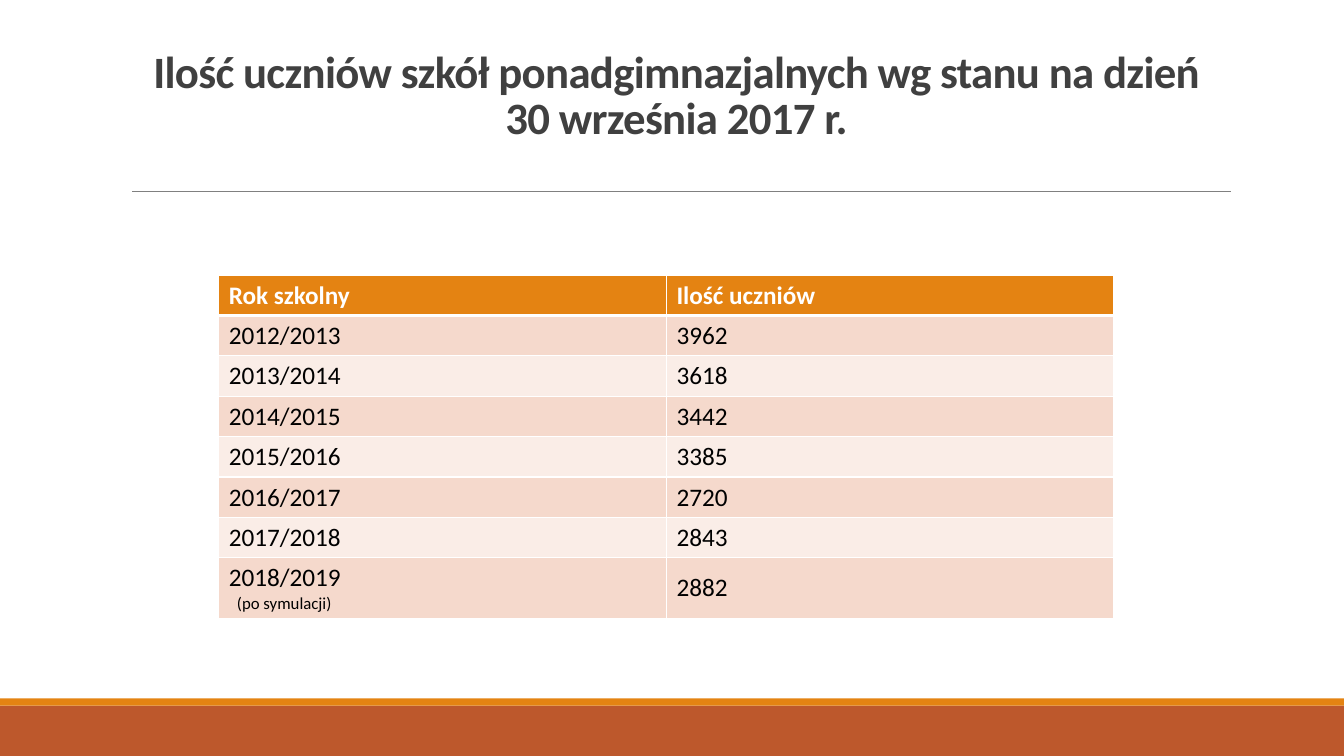
from lxml import etree
from pptx import Presentation
from pptx.dml.color import RGBColor
from pptx.enum.shapes import MSO_CONNECTOR, MSO_SHAPE
from pptx.enum.text import MSO_ANCHOR, PP_ALIGN
from pptx.oxml.ns import qn
from pptx.util import Inches, Pt

# Content
TITLE = ["Ilość uczniów szkół ponadgimnazjalnych wg stanu na dzień", "30 września 2017 r."]
ROWS = [
    ("Rok szkolny", "Ilość uczniów"),
    ("2012/2013", "3962"),
    ("2013/2014", "3618"),
    ("2014/2015", "3442"),
    ("2015/2016", "3385"),
    ("2016/2017", "2720"),
    ("2017/2018", "2843"),
    ("2018/2019", "2882"),
]
NOTE = "(po symulacji)"

# Style
FONT = "Calibri"
WHITE = RGBColor(0xFF, 0xFF, 0xFF)
BLACK = RGBColor(0, 0, 0)
DARK = RGBColor(0x40, 0x40, 0x40)
GREY = RGBColor(0x80, 0x80, 0x80)
ORANGE = RGBColor(0xE4, 0x83, 0x12)
RUST = RGBColor(0xBD, 0x58, 0x2C)
BANDS = [RGBColor(0xFA, 0xED, 0xE7), RGBColor(0xF5, 0xD9, 0xCC)]
RECTANGLE = MSO_SHAPE.RECTANGLE
STRAIGHT = MSO_CONNECTOR.STRAIGHT
MIDDLE, BOTTOM = MSO_ANCHOR.MIDDLE, MSO_ANCHOR.BOTTOM
CENTER = PP_ALIGN.CENTER

# Layout in inches
WIDTH, HEIGHT = 13.33, 7.5
FOOTER_TOP, STRIPE = 7, 0.07
RULE_LEFT, RULE_RIGHT, RULE_Y = 1.31, 12.21, 1.9
TABLE_LEFT, TABLE_TOP, COLUMN = 2.17, 2.73, 4.44
ROW, LAST_ROW = 0.4, 0.6


def add_span(para, text, size, color, bold=False):
    span = para.add_run()
    span.text = text
    span.font.name = FONT
    span.font.size = Pt(size)
    span.font.bold = bold
    span.font.color.rgb = color
    return span


def add_band(page, top, height, color):
    band = page.shapes.add_shape(RECTANGLE, 0, Inches(top), Inches(WIDTH), Inches(height))
    band.shadow.inherit = False
    band.fill.solid()
    band.fill.fore_color.rgb = color
    band.line.fill.background()


def set_borders(cell, bottom):
    properties = cell._tc.get_or_add_tcPr()
    for side, points in (("L", 1), ("R", 1), ("T", 1), ("B", bottom)):
        border = etree.SubElement(properties, qn(f"a:ln{side}"), w=str(Pt(points)))
        fill = etree.SubElement(border, qn("a:solidFill"))
        etree.SubElement(fill, qn("a:srgbClr"), val=str(WHITE))


def add_title(page):
    box = page.shapes.add_textbox(Inches(1.21), Inches(0.56), Inches(11), Inches(0.91))
    frame = box.text_frame
    frame.word_wrap = True
    frame.vertical_anchor = BOTTOM
    para = frame.paragraphs[0]
    para.alignment = CENTER
    para.line_spacing = 0.85
    for index, line in enumerate(TITLE):
        if index:
            para.add_line_break()
        span = add_span(para, line, 32, DARK, True)
        span.font._element.set("spc", "-50")


def add_pupil_table(page):
    last = len(ROWS) - 1
    frame = page.shapes.add_table(
        len(ROWS), 2, Inches(TABLE_LEFT), Inches(TABLE_TOP),
        Inches(2 * COLUMN), Inches(last * ROW + LAST_ROW))
    table = frame.table
    for column in table.columns:
        column.width = Inches(COLUMN)
    for r, values in enumerate(ROWS):
        header = r == 0
        table.rows[r].height = Inches(LAST_ROW if r == last else ROW)
        for c, value in enumerate(values):
            cell = table.cell(r, c)
            cell.vertical_anchor = MIDDLE
            set_borders(cell, 3 if header else 1)
            cell.fill.solid()
            cell.fill.fore_color.rgb = ORANGE if header else BANDS[r % 2]
            add_span(cell.text_frame.paragraphs[0], value, 18,
                     WHITE if header else BLACK, header)
    # Indented note under the last school year
    para = table.cell(last, 0).text_frame.add_paragraph()
    para._p.get_or_add_pPr().set("marL", str(Inches(0.08)))
    add_span(para, NOTE, 12, BLACK)


def main():
    deck = Presentation()
    deck.slide_width, deck.slide_height = Inches(WIDTH), Inches(HEIGHT)
    page = deck.slides.add_slide(deck.slide_layouts[6])

    # Footer bands
    add_band(page, FOOTER_TOP, HEIGHT - FOOTER_TOP, RUST)
    add_band(page, FOOTER_TOP - STRIPE, STRIPE, ORANGE)

    # Rule under the title
    rule = page.shapes.add_connector(
        STRAIGHT, Inches(RULE_LEFT), Inches(RULE_Y), Inches(RULE_RIGHT), Inches(RULE_Y))
    rule.line.color.rgb = GREY
    rule.line.width = Pt(0.5)
    etree.SubElement(rule._element.spPr, qn("a:effectLst"))

    add_title(page)
    add_pupil_table(page)
    deck.save("out.pptx")


if __name__ == "__main__":
    main()
